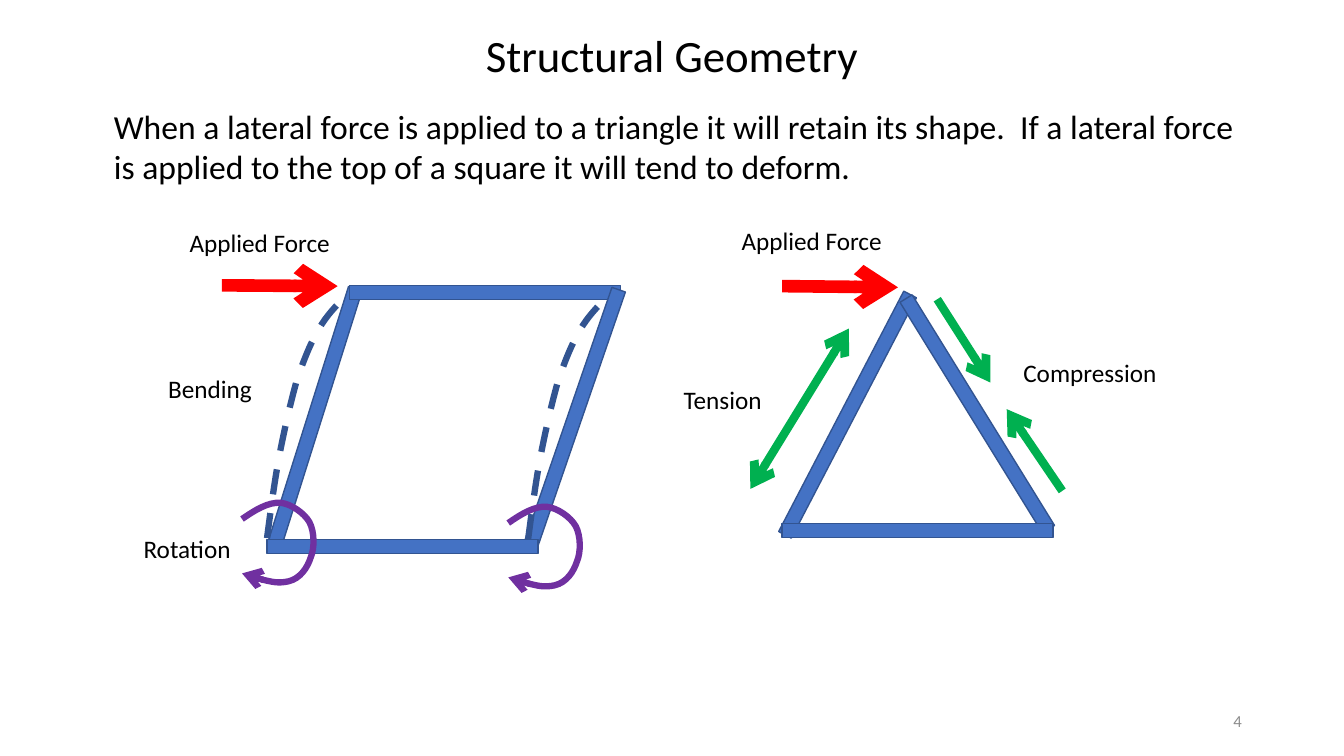
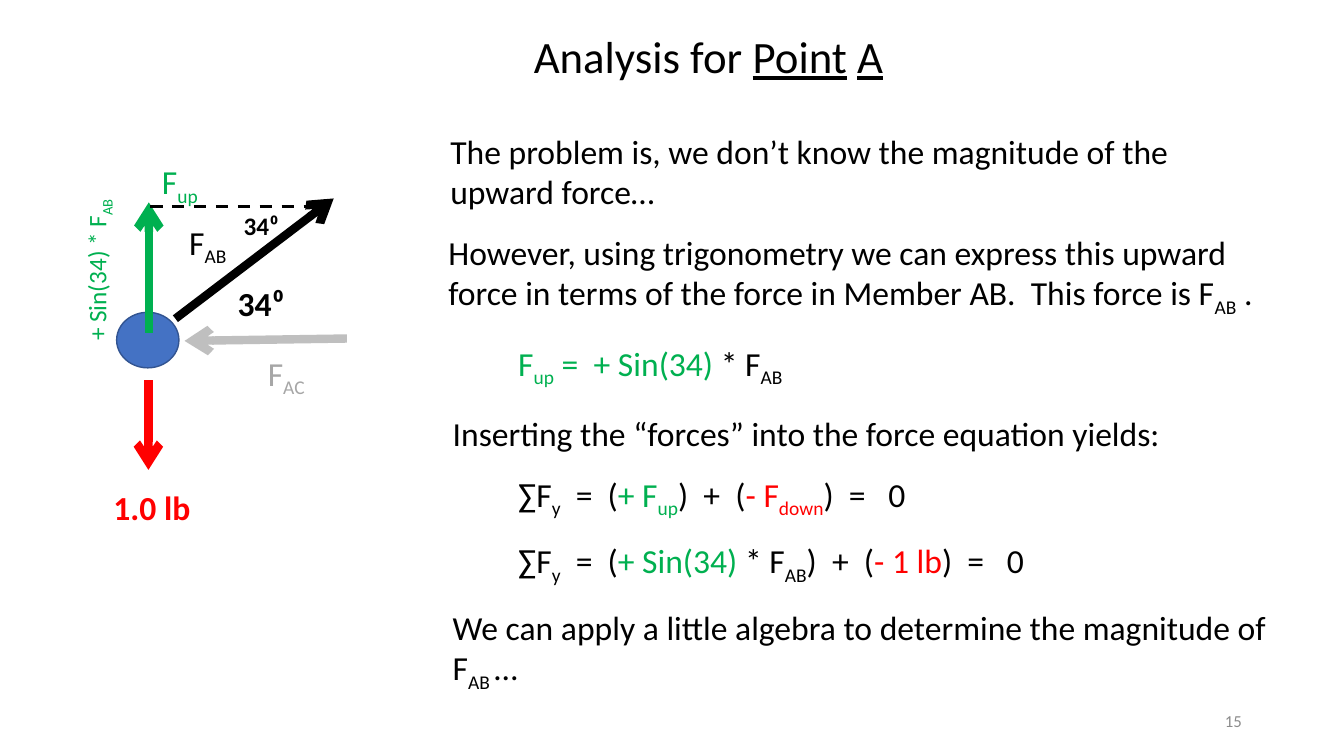
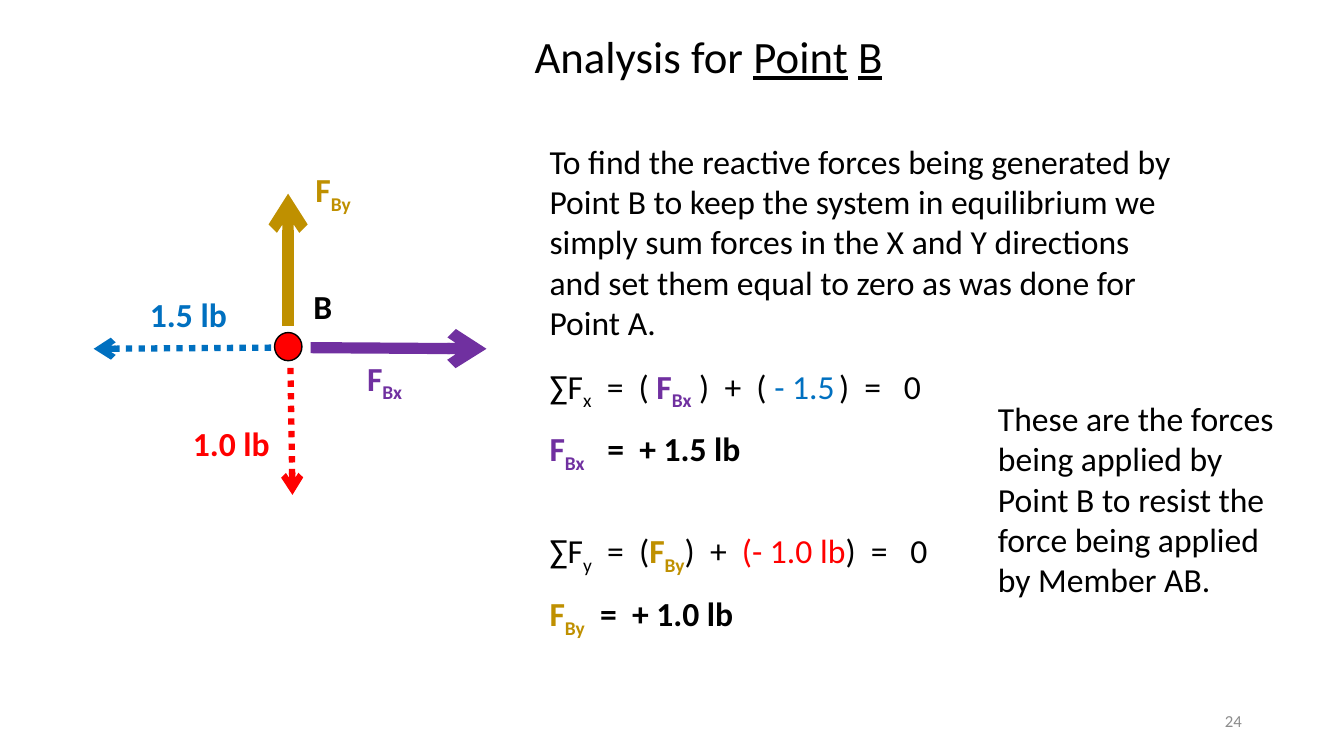
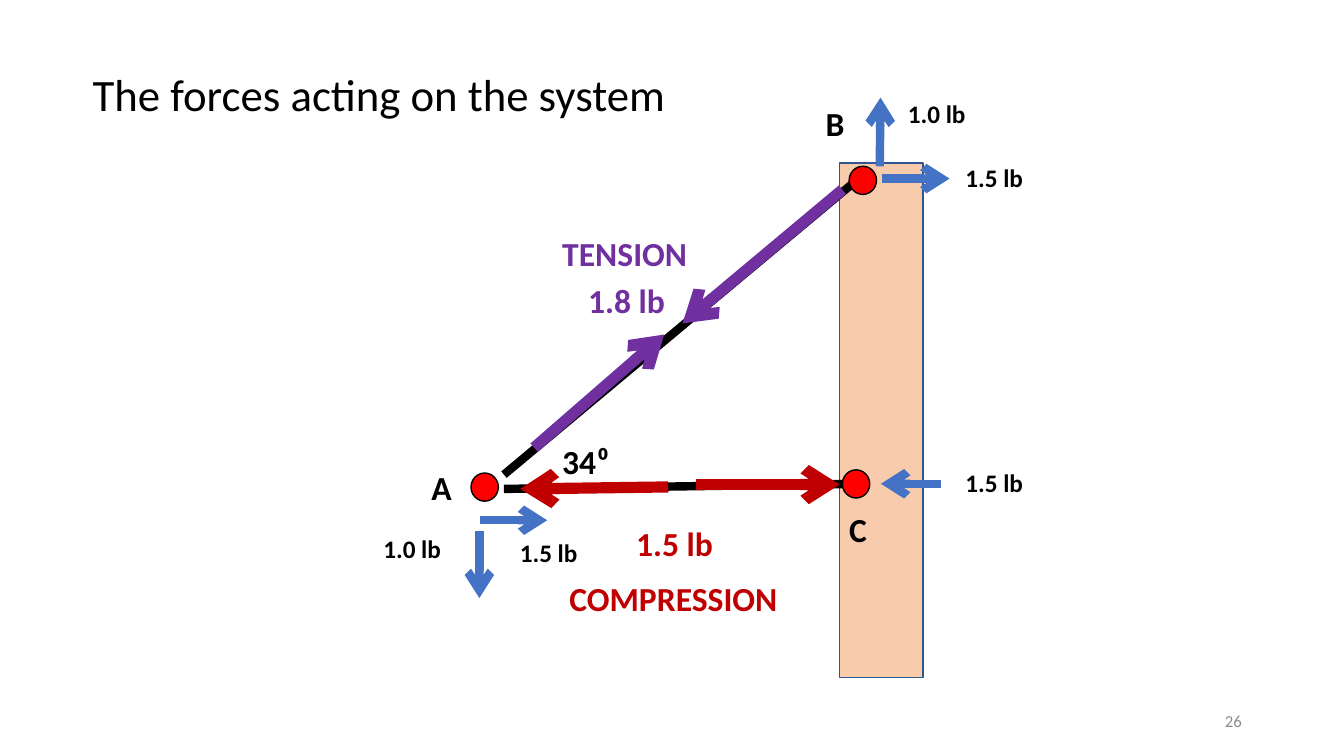
import pptx
import pptx.util
import pptx.dml.color
import pptx.enum.dml
import pptx.enum.shapes
import pptx.enum.text
import pptx.oxml
import pptx.oxml.ns

Cm = pptx.util.Cm
Pt = pptx.util.Pt
Shapes = pptx.enum.shapes.MSO_SHAPE
Align = pptx.enum.text.PP_ALIGN
Anchor = pptx.enum.text.MSO_ANCHOR
DASH = pptx.enum.dml.MSO_LINE.DASH
DOTS = pptx.enum.dml.MSO_LINE.ROUND_DOT


class Theme:
    font = "Calibri"
    title, body, label, footer = 32, 24, 18, 12
    thin, dashed, curve, arrow, thick, force = 1, 2.25, 4.5, 6, 8, 9
    colours = {
        "black": "000000", "blue": "4472C4", "navy": "325491",
        "red": "FF0000", "green": "00B050", "purple": "7030A0",
        "sky": "0070C0", "gold": "BF9000", "crimson": "C00000",
        "silver": "BFBFBF", "ash": "A6A6A6", "grey": "8C8C8C",
        "peach": "F8CBAD",
    }

    @classmethod
    def colour(cls, name):
        return pptx.dml.color.RGBColor.from_string(cls.colours[name])


def drawing_tag(name, attributes=""):
    space = pptx.oxml.ns.nsdecls("a")
    return pptx.oxml.parse_xml(f"<a:{name} {space} {attributes}/>")


class Deck:
    """Holds the presentation, its style and the current page."""

    def __init__(self):
        self.deck = pptx.Presentation()
        self.deck.slide_width = Cm(33.87)
        self.deck.slide_height = Cm(19.05)
        self.page = None

    def new_page(self, number, title, x, y, w, align=Align.CENTER):
        self.page = self.deck.slides.add_slide(self.deck.slide_layouts[5])
        self.place_text(self.page.shapes.title, x, y, w, title, Theme.title, align=align)
        self.text(23.93, 17.78, 7.62, str(number), Theme.footer, "grey", align=Align.RIGHT)

    # Text: a span is a string or (string, style words)
    def place_text(self, box, x, y, w, spans, size, style="", lines=1, align=Align.LEFT):
        box.left, box.top, box.width = Cm(x), Cm(y), Cm(w)
        box.height = Pt(lines * size * 1.2) + Cm(0.25)
        frame = box.text_frame
        frame.word_wrap = True
        frame.auto_size = pptx.enum.text.MSO_AUTO_SIZE.NONE
        frame.vertical_anchor = Anchor.TOP
        para = frame.paragraphs[0]
        para.alignment = align
        for item in [spans] if isinstance(spans, str) else spans:
            words, extra = (item, "") if isinstance(item, str) else item
            self.span(para, words, size, f"black {style} {extra}".split())

    def span(self, para, words, size, marks):
        span = para.add_run()
        span.text = words
        font = span.font
        font.name, font.size = Theme.font, Pt(size)
        font.bold, font.underline = "bold" in marks, "under" in marks
        font.color.rgb = Theme.colour([m for m in marks if m in Theme.colours][-1])
        if "sub" in marks:
            font._element.set("baseline", "-25000")

    def text(self, x, y, w, spans, size=Theme.body, style="", lines=1, align=Align.LEFT):
        box = self.page.shapes.add_textbox(0, 0, 0, 0)
        self.place_text(box, x, y, w, spans, size, style, lines, align)
        return box

    def label(self, x, y, w, words, style=""):
        return self.text(x, y, w, words, Theme.label, style)

    # Shapes
    def shape(self, kind, x, y, w, h, fill, line="navy"):
        shape = self.page.shapes.add_shape(kind, Cm(x), Cm(y), Cm(w), Cm(h))
        shape.shadow.inherit = False
        shape.fill.solid()
        shape.fill.fore_color.rgb = Theme.colour(fill)
        self.stroke(shape, line, Theme.thin)
        return shape

    def beam(self, centre_x, centre_y, angle):
        width, length = 0.36, 6.83
        beam = self.shape(Shapes.RECTANGLE, centre_x - width / 2,
                          centre_y - length / 2, width, length, "blue")
        beam.rotation = angle

    def joint(self, x, y):
        self.shape(Shapes.OVAL, x, y, 0.69, 0.71, "red", "black")

    # Lines
    def stroke(self, shape, colour, width, dash=None, ends=()):
        shape.line.color.rgb = Theme.colour(colour)
        shape.line.width = Pt(width)
        if dash:
            shape.line.dash_style = dash
        for end in ends:
            shape.get_or_add_ln().append(drawing_tag(end, 'type="arrow"'))

    def arrow(self, x1, y1, x2, y2, colour, width=Theme.arrow, dash=None, ends=("tailEnd",)):
        line = self.page.shapes.add_connector(
            pptx.enum.shapes.MSO_CONNECTOR.STRAIGHT, Cm(x1), Cm(y1), Cm(x2), Cm(y2))
        self.stroke(line, colour, width, dash, ends)
        line.element.spPr.append(drawing_tag("effectLst"))

    def curve(self, x, y, offsets, colour, dash=None, ends=()):
        """Draws cubic curves; offsets are control points from the start."""
        builder = self.page.shapes.build_freeform(Cm(x), Cm(y))
        builder.add_line_segments([(Cm(x + dx), Cm(y + dy)) for dx, dy in offsets],
                                  close=False)
        curve = builder.convert_to_shape()
        # Each three straight segments become one cubic segment
        segments = list(curve.element.iter(pptx.oxml.ns.qn("a:lnTo")))
        for first in range(0, len(segments), 3):
            cubic = drawing_tag("cubicBezTo")
            segments[first].addprevious(cubic)
            for segment in segments[first:first + 3]:
                cubic.append(segment[0])
                segment.getparent().remove(segment)
        curve.shadow.inherit = False
        curve.fill.background()
        self.stroke(curve, colour, Theme.curve, dash, ends)


def geometry_page(deck):
    deck.new_page(4, "Structural Geometry", 8.11, 0.56, 17.65)
    deck.text(2.62, 2.54, 28.96,
              "When a lateral force is applied to a triangle it will retain its shape.  "
              "If a lateral force is applied to the top of a square it will tend to deform.",
              lines=2)

    # Square, then triangle
    for beam in ((7.93, 10.53, 17.5), (12.22, 7.37, 270), (14.48, 10.53, 19),
                 (10.14, 13.77, 90), (21.36, 10.45, 27.5), (24.63, 10.43, 328.3),
                 (23.12, 13.37, 90)):
        deck.beam(*beam)

    # Forces
    deck.arrow(5.59, 7.19, 8.51, 7.21, "red", Theme.force)
    deck.arrow(19.71, 7.21, 22.63, 7.24, "red", Theme.force)
    deck.arrow(23.62, 7.54, 24.96, 9.64, "green")
    deck.arrow(26.77, 12.37, 25.37, 10.31, "green")
    deck.arrow(21.39, 8.28, 18.91, 12.32, "green", ends=("headEnd", "tailEnd"))

    # Bending and rotation of the uprights
    bend = [(0.1, -0.76), (0.2, -1.52), (0.33, -2.18), (0.46, -2.84),
            (0.61, -3.48), (0.76, -4.01), (0.94, -4.52), (1.09, -4.9),
            (1.3, -5.26), (1.5, -5.61), (1.73, -5.84), (1.98, -6.1)]
    turn = [(0.33, -0.23), (0.66, -0.43), (0.97, -0.41), (1.24, -0.38),
            (1.57, -0.15), (1.7, 0.08), (1.83, 0.33), (1.83, 0.74),
            (1.73, 0.97), (1.65, 1.22), (1.47, 1.5), (1.17, 1.57),
            (0.89, 1.63), (0.28, 1.5), (0, 1.37)]
    for x, y in ((6.73, 13.56), (13.31, 13.59)):
        deck.curve(x, y, bend, "navy", DASH)
    for x, y in ((6.1, 13.08), (12.81, 13.18)):
        deck.curve(x, y, turn, "purple", ends=("tailEnd",))

    # Labels
    for x, y, w, words in ((4.53, 5.61, 4.19, "Applied Force"),
                           (18.44, 5.56, 4.19, "Applied Force"),
                           (25.54, 8.88, 4.93, "Compression"),
                           (16.98, 9.57, 2.92, "Tension"),
                           (3.99, 9.29, 3.15, "Bending"),
                           (3.37, 13.31, 3.15, "Rotation")):
        deck.label(x, y, w, words)


def analysis_page(deck, number, point):
    title = ["Analysis for ", ("Point", "under"), " ", (point, "under")]
    deck.new_page(number, title, 7.86, 0.6, 19.99)


def point_a_page(deck):
    analysis_page(deck, 15, "A")

    # Force diagram
    deck.shape(Shapes.OVAL, 2.94, 7.87, 1.57, 1.4, "blue")
    deck.arrow(3.74, 9.58, 3.74, 11.84, "red")
    deck.arrow(8.74, 8.53, 4.65, 8.59, "silver")
    deck.arrow(4.42, 8.03, 8.41, 5, "black")
    deck.arrow(3.75, 8.38, 3.75, 5.1, "green")
    deck.arrow(3.78, 5.21, 7.9, 5.21, "black", Theme.dashed, DASH, ends=())
    deck.text(2.61, 12.14, 2.79, "1.0 lb", style="red bold")
    deck.text(6.5, 8.76, 2.46, ["F", ("AC", "sub")], style="ash")
    deck.text(4.52, 5.46, 2.46, ["F", ("AB", "sub")])
    deck.text(3.83, 3.94, 1.57, ["F", ("up", "sub")], style="green")
    deck.text(5.74, 7.01, 2.18, "34⁰", style="bold")
    deck.label(5.89, 5.18, 1.68, "34⁰", "bold")
    upward = deck.label(0.01, 5.92, 4.83, ["+ Sin(34) * F", ("AB", "sub")], "green")
    upward.rotation = 270

    # Explanation
    deck.text(11.1, 3.17, 21.21,
              "The problem is, we don’t know the magnitude of the upward force…", lines=2)
    deck.text(11.05, 5.72, 21.11,
              ["However, using trigonometry we can express this upward force in terms "
               "of the force in Member AB.  This force is F", ("AB", "sub"), " ."], lines=2)
    deck.text(11.16, 10.27, 19.51, "Inserting the “forces” into the force equation yields:")
    deck.text(11.16, 15.17, 21.01,
              ["We can apply a little algebra to determine the magnitude of F",
               ("AB ", "sub"), "…"], lines=2)

    # Equations
    sum_y = ["∑F", ("y", "sub"), "  =  ("]
    deck.text(12.81, 8.51, 12.32,
              [("F", "green"), ("up", "green sub"), (" =  + Sin(34) ", "green"),
               "* F", ("AB", "sub")])
    deck.text(12.81, 11.81, 11.84,
              sum_y + [("+ F", "green"), ("up", "green sub"), ")  +  (",
                       ("- F", "red"), ("down", "red sub"), ")  =   0"])
    deck.text(12.81, 13.49, 14.55,
              sum_y + [("+ Sin(34) ", "green"), "* F", ("AB", "sub"), ")  +  (",
                       ("- 1 lb", "red"), ")  =   0"])


def point_b_page(deck):
    analysis_page(deck, 24, "B")

    # Force diagram
    deck.joint(6.92, 8.38)
    deck.arrow(6.83, 8.76, 2.36, 8.79, "sky", Theme.curve, DOTS)
    deck.arrow(7.32, 9.27, 7.37, 12.47, "red", Theme.curve, DOTS)
    deck.arrow(7.83, 8.76, 12.26, 8.79, "purple", Theme.thick)
    deck.arrow(7.26, 8.21, 7.26, 4.88, "gold", Theme.thick)
    deck.text(7.65, 7.09, 1.22, "B", style="bold")
    deck.text(3.53, 7.27, 3.3, "1.5 lb", style="sky bold")
    deck.text(4.61, 10.54, 3.23, "1.0 lb", style="red bold")
    deck.text(9, 8.89, 2.21, ["F", ("Bx", "sub")], style="purple bold")
    deck.text(7.7, 4.14, 2.31, ["F", ("By", "sub")], style="gold bold")

    # Explanation
    deck.text(13.6, 3.42, 16.41,
              "To find the reactive forces being generated by Point B to keep the system "
              "in equilibrium we simply sum forces in the X and Y directions and set them "
              "equal to zero as was done for Point A.", lines=5)
    deck.text(24.9, 9.9, 7.62,
              "These are the forces being applied by Point B to resist the force being "
              "applied by Member AB.", lines=5)

    # Equations
    deck.text(13.6, 9.09, 11.28,
              ["∑F", ("x", "sub"), "  =  ( ", ("F", "purple bold"),
               ("Bx", "purple bold sub"), " )  +  ( ", ("- 1.5", "sky"),
               (" ", "sky sub"), ")  =   0"])
    deck.text(13.6, 10.67, 7.04,
              [("F", "purple"), ("Bx", "purple sub"), "   =  + 1.5 lb"], style="bold")
    deck.text(13.6, 13.24, 11.28,
              ["∑F", ("y", "sub"), "  =  (", ("F", "gold bold"),
               ("By", "gold bold sub"), ")  +  ", ("(- 1.0 lb", "red"), ")  =   0"])
    deck.text(13.6, 14.82, 9.35,
              [("F", "gold"), ("By", "gold sub"), "  =  + 1.0 lb"], style="bold")


def system_page(deck):
    deck.new_page(26, "The forces acting on the system", 2.08, 1.55, 15.57, Align.LEFT)

    # Wall, members and joints
    deck.shape(Shapes.RECTANGLE, 21.15, 4.11, 2.11, 12.97, "peach")
    deck.arrow(21.77, 4.39, 12.7, 11.96, "black", ends=())
    deck.arrow(21.77, 12.19, 12.7, 12.32, "black", ends=())
    for x, y in ((21.4, 4.19), (11.87, 11.92), (21.23, 11.84)):
        deck.joint(x, y)

    # Member forces
    for ends in ((21.23, 4.78, 17.2, 8.15), (13.46, 11.28, 16.74, 8.43)):
        deck.arrow(*ends, "purple", Theme.thick)
    for ends in ((16.84, 12.27, 13.11, 12.32), (17.55, 12.21, 21.16, 12.21)):
        deck.arrow(*ends, "crimson", Theme.thick)

    # Outer forces
    for ends in ((12.09, 13.11, 13.79, 13.11), (12.08, 13.39, 12.08, 15.07),
                 (22.23, 4.5, 23.93, 4.5), (22.17, 4.19, 22.19, 2.46),
                 (23.72, 12.19, 22.2, 12.19)):
        deck.arrow(*ends, "blue")

    # Labels
    for x, y, w, words, colour in ((10.62, 11.65, 1.22, "A", "black"),
                                   (20.56, 2.46, 1.22, "B", "black"),
                                   (21.15, 12.7, 1.22, "C", "black"),
                                   (13.92, 10.98, 2.84, "34⁰", "black"),
                                   (13.92, 5.74, 5.41, "TENSION", "purple"),
                                   (14.57, 6.92, 2.84, "1.8 lb", "purple"),
                                   (15.78, 13.06, 2.84, "1.5 lb", "crimson"),
                                   (14.1, 14.43, 6.2, "COMPRESSION", "crimson")):
        deck.text(x, y, w, words, style=f"{colour} bold")
    for x, y, words in ((24.08, 11.66, "1.5 lb"), (24.08, 3.96, "1.5 lb"),
                        (22.63, 2.35, "1.0 lb"), (9.41, 13.31, "1.0 lb"),
                        (12.85, 13.41, "1.5 lb")):
        deck.label(x, y, 2.57, words, "bold")


def main():
    deck = Deck()
    geometry_page(deck)
    point_a_page(deck)
    point_b_page(deck)
    system_page(deck)
    deck.deck.save("out.pptx")


if __name__ == "__main__":
    main()
